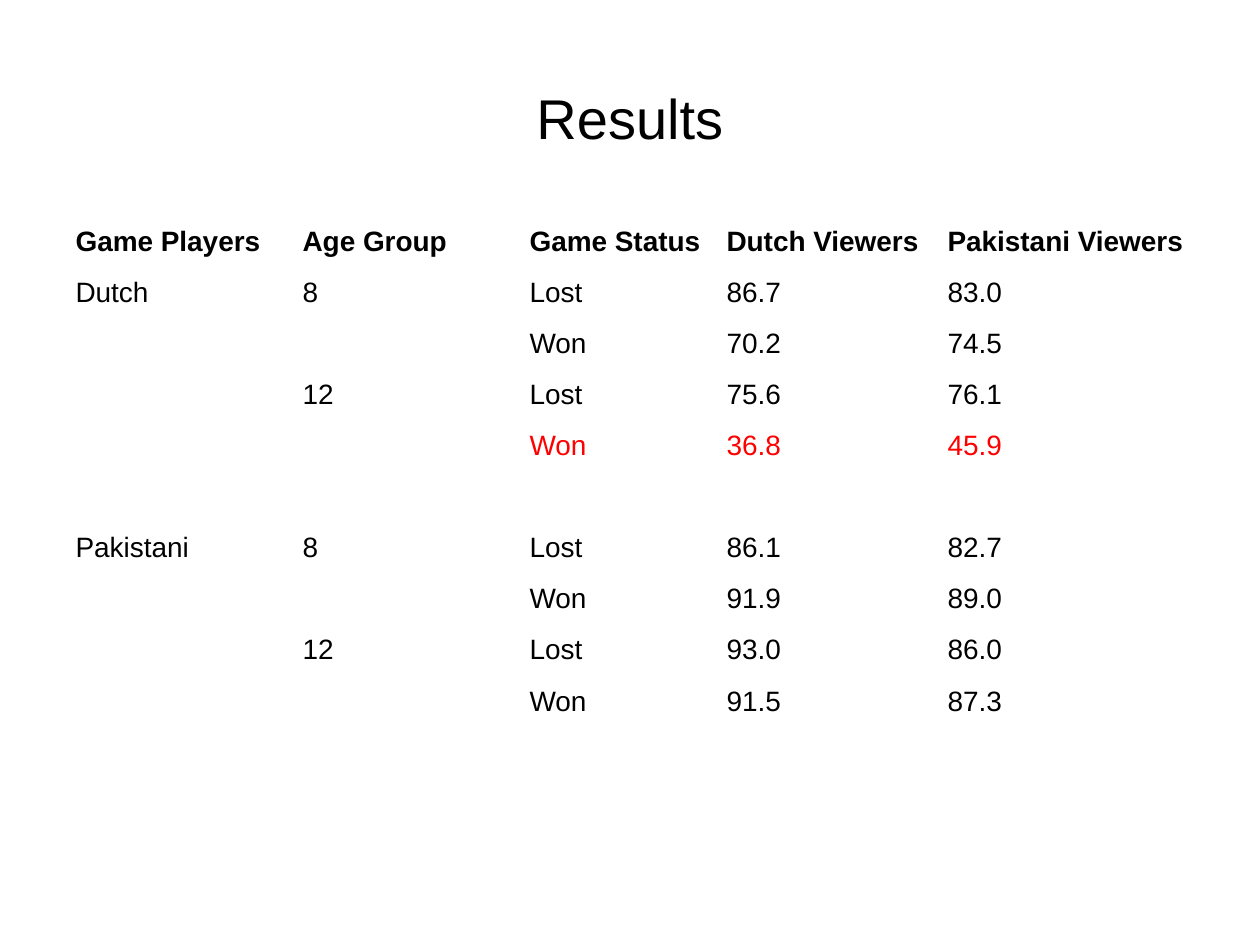
from dataclasses import dataclass

from pptx import Presentation
from pptx.dml.color import RGBColor
from pptx.enum.text import MSO_ANCHOR, PP_ALIGN
from pptx.util import Emu, Pt

EMU_PER_PX = 914400 / 126


@dataclass(frozen=True)
class Theme:
    font: str = "Arial"
    ink: RGBColor = RGBColor(0x00, 0x00, 0x00)
    highlight: RGBColor = RGBColor(0xFF, 0x00, 0x00)
    title_size: int = 32
    body_size: int = 16


THEME = Theme()
ROW_HEIGHT = 51
COLUMN_WIDTHS = (227, 227, 197, 221, 262)
HIGHLIGHTED_ROW = 4
RESULTS = (
    ("Game Players", "Age Group", "Game Status", "Dutch Viewers", "Pakistani Viewers"),
    ("Dutch", "8", "Lost", "86.7", "83.0"),
    ("", "", "Won", "70.2", "74.5"),
    ("", "12", "Lost", "75.6", "76.1"),
    ("", "", "Won", "36.8", "45.9"),
    ("", "", "", "", ""),
    ("Pakistani", "8", "Lost", "86.1", "82.7"),
    ("", "", "Won", "91.9", "89.0"),
    ("", "12", "Lost", "93.0", "86.0"),
    ("", "", "Won", "91.5", "87.3"),
)


def px(length):
    return Emu(round(length * EMU_PER_PX))


def write(text_frame, text, size, color, bold=False):
    text_frame.text = text
    for run in text_frame.paragraphs[0].runs:
        run.font.name = THEME.font
        run.font.size = Pt(size)
        run.font.bold = bold
        run.font.color.rgb = color


def set_title(slide, text, left, top, width, height):
    title = slide.shapes.title
    title.left, title.top = px(left), px(top)
    title.width, title.height = px(width), px(height)
    write(title.text_frame, text, THEME.title_size, THEME.ink)
    title.text_frame.vertical_anchor = MSO_ANCHOR.MIDDLE
    title.text_frame.paragraphs[0].alignment = PP_ALIGN.CENTER


def add_results_table(slide, results, left, top):
    table = slide.shapes.add_table(
        len(results), len(COLUMN_WIDTHS), px(left), px(top),
        px(sum(COLUMN_WIDTHS)), px(ROW_HEIGHT * len(results)),
    ).table
    table.first_row = False
    table.horz_banding = False
    for column, width in zip(table.columns, COLUMN_WIDTHS):
        column.width = px(width)
    for row_index, (row, values) in enumerate(zip(table.rows, results)):
        row.height = px(ROW_HEIGHT)
        color = THEME.highlight if row_index == HIGHLIGHTED_ROW else THEME.ink
        for cell, value in zip(row.cells, values):
            cell.fill.background()
            write(cell.text_frame, value, THEME.body_size, color, bold=row_index == 0)


def main():
    presentation = Presentation()
    presentation.slide_width, presentation.slide_height = px(1260), px(945)
    slide = presentation.slides.add_slide(presentation.slide_layouts.get_by_name("Title Only"))
    set_title(slide, "Results", 63, 38, 1134, 158)
    add_results_table(slide, RESULTS, 63, 220)
    presentation.save("out.pptx")


if __name__ == "__main__":
    main()
